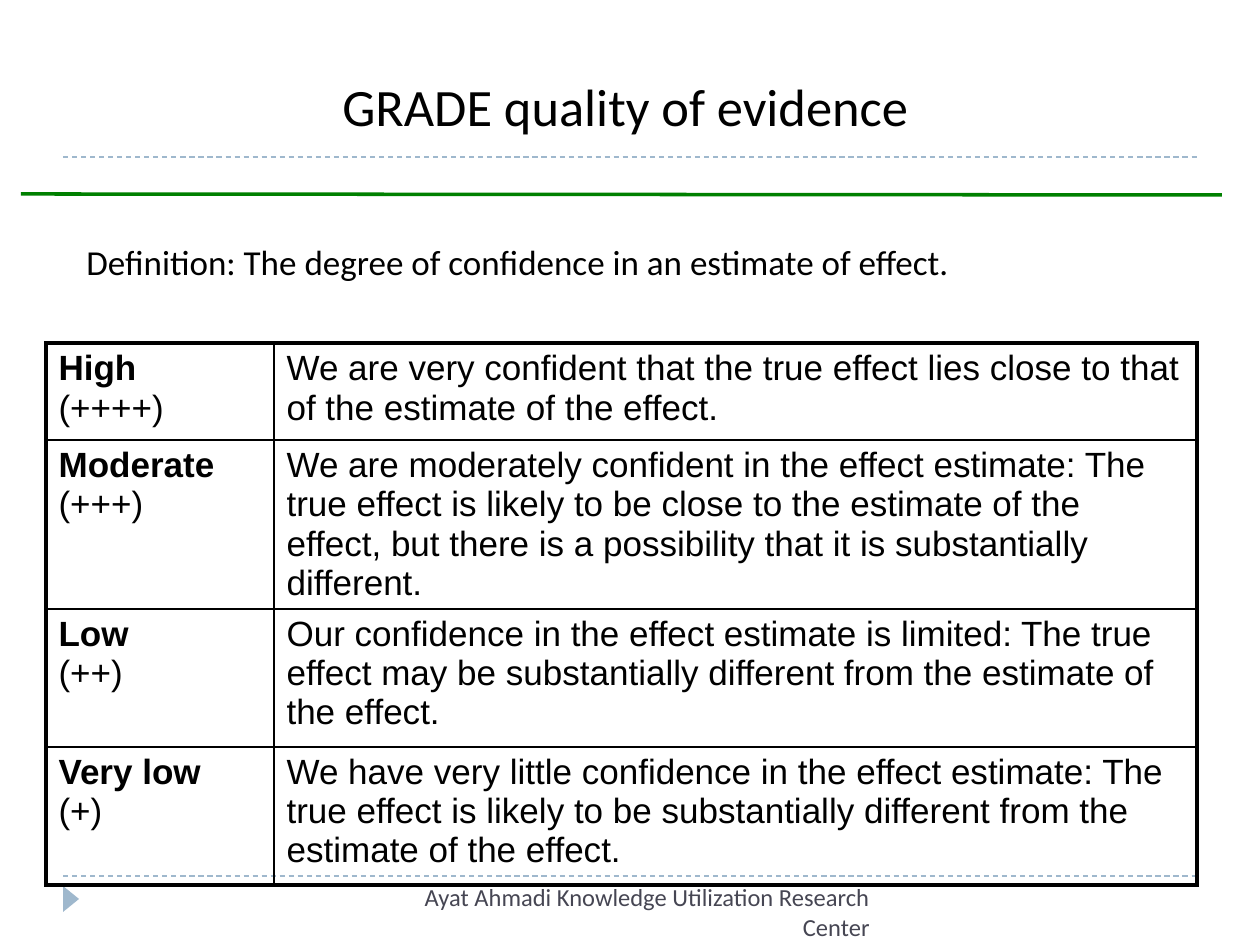
import pptx
import pptx.util
import pptx.dml.color
import pptx.enum.dml
import pptx.enum.shapes
import pptx.enum.text
import pptx.oxml
import pptx.oxml.ns

SCALE = 914400 / 126
COLORS = {"text": "000000", "footer": "464653", "accent": "9FB8CD", "rule": "008000"}
ALIGN = pptx.enum.text.PP_ALIGN
ANCHOR = pptx.enum.text.MSO_ANCHOR
OUTER_WIDTH, INNER_WIDTH = 2.25, 1
COLUMN_WIDTHS = [228, 923]
ROW_HEIGHTS = [97, 169, 138, 138]
GRADES = [
    ("High", "(++++)", "We are very confident that the true effect lies close to that of the estimate of the effect."),
    ("Moderate", "(+++)", "We are moderately confident in the effect estimate: The true effect is likely to be close to the estimate of the effect, but there is a possibility that it is substantially different."),
    ("Low", "(++)", "Our confidence in the effect estimate is limited: The true effect may be substantially different from the estimate of the effect."),
    ("Very low", "(+)", "We have very little confidence in the effect estimate: The true effect is likely to be substantially different from the estimate of the effect."),
]


def px(length):
    return pptx.util.Emu(round(length * SCALE))


def color(name):
    return pptx.dml.color.RGBColor.from_string(COLORS[name])


def style_paragraph(paragraph, font_name, size, color_name="text"):
    paragraph.font.name = font_name
    paragraph.font.size = pptx.util.Pt(size)
    paragraph.font.color.rgb = color(color_name)


def add_text(slide, box, text, size, color_name="text", align=ALIGN.LEFT, anchor=ANCHOR.TOP):
    frame = slide.shapes.add_textbox(*map(px, box)).text_frame
    frame.word_wrap = True
    frame.vertical_anchor = anchor
    paragraph = frame.paragraphs[0]
    paragraph.text = text
    paragraph.alignment = align
    style_paragraph(paragraph, "Calibri", size, color_name)


def add_line(slide, start, end, color_name, width, dashed=False):
    line = slide.shapes.add_connector(
        pptx.enum.shapes.MSO_CONNECTOR.STRAIGHT, *map(px, start + end))
    line.line.color.rgb = color(color_name)
    line.line.width = pptx.util.Pt(width)
    if dashed:
        line.line.dash_style = pptx.enum.dml.MSO_LINE.DASH
    pptx.oxml.ns.qn("a:effectLst")
    line._element.spPr.append(pptx.oxml.parse_xml(
        f'<a:effectLst {pptx.oxml.ns.nsdecls("a")}/>'))


def add_frame(slide, box):
    left, top, width, height = box
    for y in (top + height, top):
        add_line(slide, (left, y), (left + width, y), "accent", 0.75, dashed=True)
    marker = slide.shapes.add_shape(
        pptx.enum.shapes.MSO_SHAPE.ISOSCELES_TRIANGLE,
        px(left - 5), px(top + height + 15), px(26), px(16))
    marker.rotation = 90
    marker.shadow.inherit = False
    marker.fill.solid()
    marker.fill.fore_color.rgb = color("accent")
    marker.line.fill.background()


def add_header(slide, box):
    left, top, width, height = box
    add_text(slide, box, "GRADE quality of evidence", 30, align=ALIGN.CENTER, anchor=ANCHOR.MIDDLE)
    rule_y = top + height + 10
    add_line(slide, (left - 9, rule_y), (left + width + 1, rule_y + 1), "rule", 2)


def set_borders(cell, widths):
    properties = cell._tc.get_or_add_tcPr()
    for index, (side, width) in enumerate(widths.items()):
        properties.insert(index, pptx.oxml.parse_xml(
            f'<a:ln{side} {pptx.oxml.ns.nsdecls("a")} w="{pptx.util.Pt(width)}">'
            f'<a:solidFill><a:srgbClr val="{COLORS["text"]}"/></a:solidFill></a:ln{side}>'))


def add_grade_table(slide, left, top):
    rows, columns = len(ROW_HEIGHTS), len(COLUMN_WIDTHS)
    table = slide.shapes.add_table(
        rows, columns, px(left), px(top),
        px(sum(COLUMN_WIDTHS)), px(sum(ROW_HEIGHTS))).table
    table.first_row = False
    table.horz_banding = False
    for column, width in zip(table.columns, COLUMN_WIDTHS):
        column.width = px(width)
    for row, height in zip(table.rows, ROW_HEIGHTS):
        row.height = px(height)

    for row_index, (grade, symbol, meaning) in enumerate(GRADES):
        for column_index in range(columns):
            cell = table.cell(row_index, column_index)
            cell.fill.background()
            edges = {"L": column_index == 0, "R": column_index == columns - 1,
                     "T": row_index == 0, "B": row_index == rows - 1}
            set_borders(cell, {side: OUTER_WIDTH if outer else INNER_WIDTH
                               for side, outer in edges.items()})
            paragraph = cell.text_frame.paragraphs[0]
            style_paragraph(paragraph, "Arial", 20)
            if column_index == 0:
                run = paragraph.add_run()
                run.text = grade
                run.font.bold = True
                paragraph.add_line_break()
                paragraph.add_run().text = symbol
            else:
                paragraph.add_run().text = meaning


def main():
    presentation = pptx.Presentation()
    presentation.slide_width = px(1260)
    presentation.slide_height = px(945)
    slide = presentation.slides.add_slide(presentation.slide_layouts[6])
    add_frame(slide, (63, 157, 1134, 719))
    add_grade_table(slide, 46, 343)
    add_text(slide, (74, 234, 1081, 55),
             "Definition: The degree of confidence in an estimate of effect.", 20)
    add_header(slide, (30, 26, 1191, 158))
    add_text(slide, (399, 876, 483, 50),
             "Ayat Ahmadi Knowledge Utilization Research Center", 14, "footer", ALIGN.RIGHT)
    presentation.save("out.pptx")


if __name__ == "__main__":
    main()
